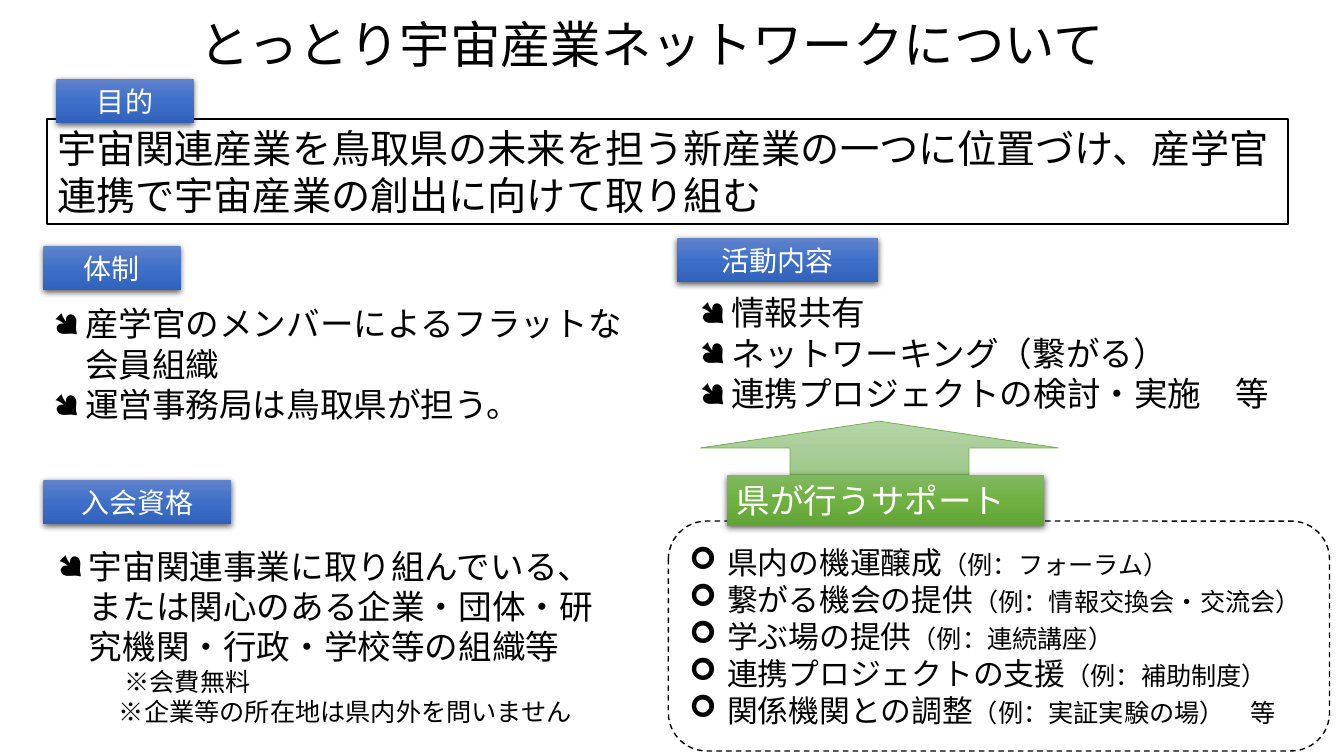
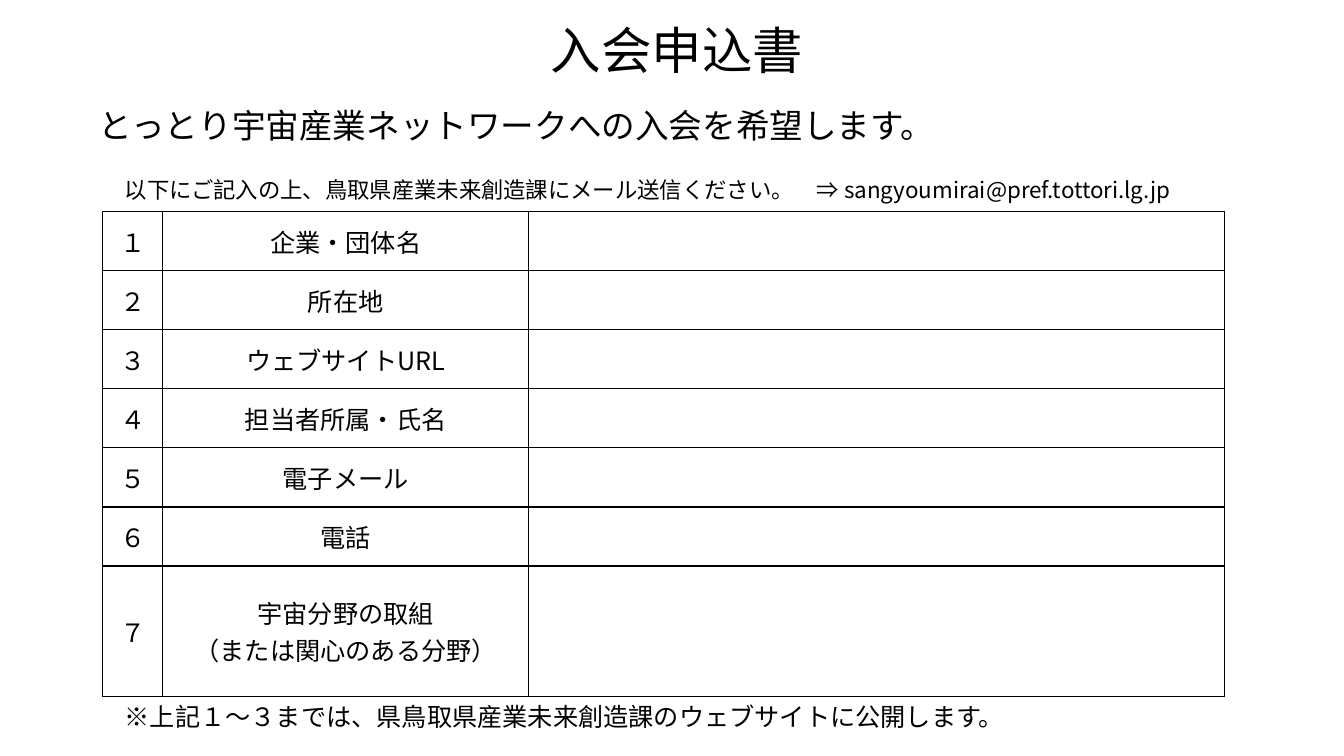
from copy import deepcopy
from lxml.etree import SubElement as Sub
from pptx import Presentation
from pptx.dml.color import RGBColor as Color
from pptx.enum.dml import MSO_LINE as Dash
from pptx.enum.shapes import MSO_SHAPE as Form
from pptx.enum.text import MSO_ANCHOR as Anchor, MSO_AUTO_SIZE as Auto, PP_ALIGN as Align
from pptx.oxml.ns import qn
from pptx.util import Pt

FONT = "Noto Sans CJK JP"
BLACK = Color(0, 0, 0)
WHITE = Color(255, 255, 255)
GREEN = Color(0x70, 0xAD, 0x47)
BLUES = [Color(0x61, 0x83, 0xCB), Color(0x3E, 0x70, 0xCA), Color(0x30, 0x62, 0xBB)]
GREENS = [Color(0x81, 0xB8, 0x61), Color(0x6F, 0xB2, 0x42), Color(0x62, 0xA3, 0x36)]
PALES = [Color(0xB5, 0xD5, 0xA7), Color(0xAA, 0xCE, 0x9A), Color(0x9C, 0xC9, 0x87)]
DOT, ARROW = "●", "➢"


def style(run, size, color):
    """Set the font of one run, for Latin and Japanese text."""
    font = run.font
    font.name, font.size, font.bold = FONT, Pt(size), False
    font.color.rgb = color
    latin = run._r.rPr.find(qn("a:latin"))
    east = deepcopy(latin)
    east.tag = qn("a:ea")
    latin.addnext(east)


def indent(para, left, hang=0, mark=None):
    """Set the indent of a paragraph and its bullet, if any."""
    props = para._p.get_or_add_pPr()
    props.set("marL", str(Pt(left)))
    props.set("indent", str(Pt(-hang)))
    if mark:
        Sub(props, qn("a:buFont"), typeface="Wingdings")
        Sub(props, qn("a:buChar"), char=mark)
    else:
        Sub(props, qn("a:buNone"))


def write(frame, lines, size, color=BLACK, align=Align.LEFT, mark=None, hang=0, anchor=Anchor.TOP):
    """Fill a frame with lines, each a string or a (main, small) pair."""
    frame.word_wrap = True
    frame.auto_size = Auto.NONE
    frame.vertical_anchor = anchor
    for i, line in enumerate(lines):
        para = frame.add_paragraph() if i else frame.paragraphs[0]
        indent(para, hang, hang, mark)
        para.alignment = align
        para.space_before = Pt(0)
        parts = (line,) if isinstance(line, str) else line
        for part, pts in zip(parts, (size, 18)):
            run = para.add_run()
            run.text = part
            style(run, pts, color)


def place(shape, box):
    """Move a shape to a box of left, top, width and height."""
    shape.left, shape.top, shape.width, shape.height = map(Pt, box)
    return shape


def draw(slide, form, box):
    """Add a plain shape with no fill, line or shadow."""
    shape = slide.shapes.add_shape(form, *map(Pt, box))
    shape.fill.background()
    shape.line.fill.background()
    shape.shadow.inherit = False
    return shape


def blend(shape, colors):
    """Fill a shape from top to bottom with three colours."""
    fill = shape.fill
    fill.gradient()
    fill.gradient_angle = 270
    first = shape._element.spPr.find(".//" + qn("a:gs"))
    first.addnext(deepcopy(first))
    for stop, color, pos in zip(fill.gradient_stops, colors, (0, 0.5, 1)):
        stop.color.rgb, stop.position = color, pos


def badge(slide, label, box, colors=BLUES, size=20, align=Align.CENTER):
    """Add a shaded heading label with a soft shadow."""
    shape = draw(slide, Form.RECTANGLE, box)
    blend(shape, colors)
    effects = shape._element.spPr.find(qn("a:effectLst"))
    shade = Sub(effects, qn("a:outerShdw"), blurRad=str(Pt(4.5)), dist=str(Pt(1.5)),
                dir="5400000", algn="ctr", rotWithShape="0")
    tone = Sub(shade, qn("a:srgbClr"), val=str(BLACK))
    Sub(tone, qn("a:alpha"), val="63000")
    write(shape.text_frame, [label], size, WHITE, align, anchor=Anchor.MIDDLE)


def title(slide, text, box):
    """Set the slide title."""
    write(place(slide.shapes.title, box).text_frame, [text], 36, align=Align.CENTER)


def note(slide, text, box, size):
    """Add a single line of text."""
    write(slide.shapes.add_textbox(*map(Pt, box)).text_frame, [text], size)


def section(slide, holder, label, lines, spot, wide, box):
    """Add a heading label and the bullet list under it."""
    badge(slide, label, (*spot, wide, 31.7))
    frame = place(holder, box).text_frame
    write(frame, lines, 24, mark=DOT, hang=22.5)
    return frame


def remark(frame, text, left):
    """Add a small unbulleted line below a list."""
    para = frame.add_paragraph()
    indent(para, left)
    para.space_before = Pt(0)
    para.text = text
    style(para.runs[0], 18, BLACK)


def purpose(slide, left, top):
    """Add the framed statement of purpose."""
    shape = draw(slide, Form.RECTANGLE, (left, top, 886.3, 75))
    shape.line.color.rgb, shape.line.width = BLACK, Pt(1.5)
    write(shape.text_frame, ["宇宙関連産業を鳥取県の未来を担う新産業の一つに位置づけ、"
                             "産学官連携で宇宙産業の創出に向けて取り組む"], 28)
    badge(slide, "目的", (left + 6.5, top - 28.8, 98, 31.7))


def support(slide, left, top):
    """Add the dashed support panel with its label and arrow."""
    panel = draw(slide, Form.ROUNDED_RECTANGLE, (left, top, 472.3, 164.2))
    panel.line.color.rgb, panel.line.width = BLACK, Pt(1)
    panel.line.dash_style = Dash.DASH
    write(panel.text_frame, [
        ("県内の機運醸成", "（例：フォーラム）"),
        ("繋がる機会の提供", "（例：情報交換会・交流会）"),
        ("学ぶ場の提供", "（例：連続講座）"),
        ("連携プロジェクトの支援", "（例：補助制度）"),
        ("関係機関との調整", "（例：実証実験の場）　等"),
    ], 22, mark=ARROW, hang=27, anchor=Anchor.MIDDLE)
    arrow = draw(slide, Form.UP_ARROW, (left + 23, top - 71.3, 255.6, 38.2))
    blend(arrow, PALES)
    arrow.line.color.rgb, arrow.line.width = GREEN, Pt(0.5)
    badge(slide, "県が行うサポート", (left + 41.8, top - 33.1, 226.8, 36.3), GREENS, 24, Align.LEFT)


def about(deck):
    """Build the slide about the network."""
    slide = deck.slides.add_slide(deck.slide_layouts[4])
    holders = list(slide.placeholders)
    title(slide, "とっとり宇宙産業ネットワークについて", (74.2, 5.8, 782.6, 51))
    purpose(slide, 33.8, 85)
    section(slide, holders[1], "体制",
            ["産学官のメンバーによるフラットな会員組織", "運営事務局は鳥取県が担う。"],
            (31, 175.7), 98, (31, 213, 439, 94.3))
    section(slide, holders[2], "活動内容",
            ["情報共有", "ネットワーキング（繋がる）", "連携プロジェクトの検討・実施　等"],
            (483.8, 170), 143.3, (492.5, 205.2, 458.6, 94.3))
    frame = section(slide, holders[3], "入会資格",
                    ["宇宙関連事業に取り組んでいる、または関心のある企業・団体・"
                     "研究機関・行政・学校等の組織等"],
                    (31, 342.7), 134, (33.8, 386, 419, 145.4))
    remark(frame, "※会費無料", 48)
    remark(frame, "※企業等の所在地は県内外を問いません", 44)
    support(slide, 477.4, 372.2)
    spare = holders[4]._element
    spare.getparent().remove(spare)


def edge(cell):
    """Draw thin black borders around a cell."""
    props = cell._tc.get_or_add_tcPr()
    for i, side in enumerate(("lnL", "lnR", "lnT", "lnB")):
        line = props.makeelement(qn("a:" + side), {"w": str(Pt(1))})
        props.insert(i, line)
        Sub(Sub(line, qn("a:solidFill")), qn("a:srgbClr"), val=str(BLACK))


def form(slide, left, top):
    """Add the table of entry fields."""
    fields = [["企業・団体名"], ["所在地"], ["ウェブサイトURL"], ["担当者所属・氏名"],
              ["電子メール"], ["電話"], ["宇宙分野の取組", "（または関心のある分野）"]]
    table = slide.shapes.add_table(7, 3, Pt(left), Pt(top), Pt(801), Pt(346.2)).table
    table.first_row = table.horz_banding = False
    for col, wide in zip(table.columns, (42.5, 261.8, 496.7)):
        col.width = Pt(wide)
    for i, (row, names) in enumerate(zip(table.rows, fields)):
        row.height = Pt(42.2 if i < 6 else 93)
        for cell, lines in zip(row.cells, (["１２３４５６７"[i]], names, [])):
            cell.fill.background()
            edge(cell)
            cell.vertical_anchor = Anchor.MIDDLE
            for j, line in enumerate(lines):
                frame = cell.text_frame
                para = frame.add_paragraph() if j else frame.paragraphs[0]
                para.text = line
                para.alignment = Align.CENTER
                style(para.runs[0], 18, BLACK)


def apply(deck):
    """Build the application form slide."""
    slide = deck.slides.add_slide(deck.slide_layouts[5])
    title(slide, "入会申込書", (103, 10, 761, 51))
    note(slide, "とっとり宇宙産業ネットワークへの入会を希望します。", (63.4, 71.3, 861.8, 36), 24)
    note(slide, "以下にご記入の上、鳥取県産業未来創造課にメール送信ください。"
                "　⇒ sangyoumirai@pref.tottori.lg.jp", (82, 122.4, 792.7, 26.6), 16)
    form(slide, 73.5, 151.2)
    note(slide, "※上記１～３までは、県鳥取県産業未来創造課のウェブサイトに公開します。",
         (82, 497.5, 679.7, 29), 18)


def main():
    """Build and save the deck."""
    deck = Presentation()
    deck.slide_width, deck.slide_height = Pt(960), Pt(540)
    about(deck)
    apply(deck)
    deck.save("out.pptx")


if __name__ == "__main__":
    main()
